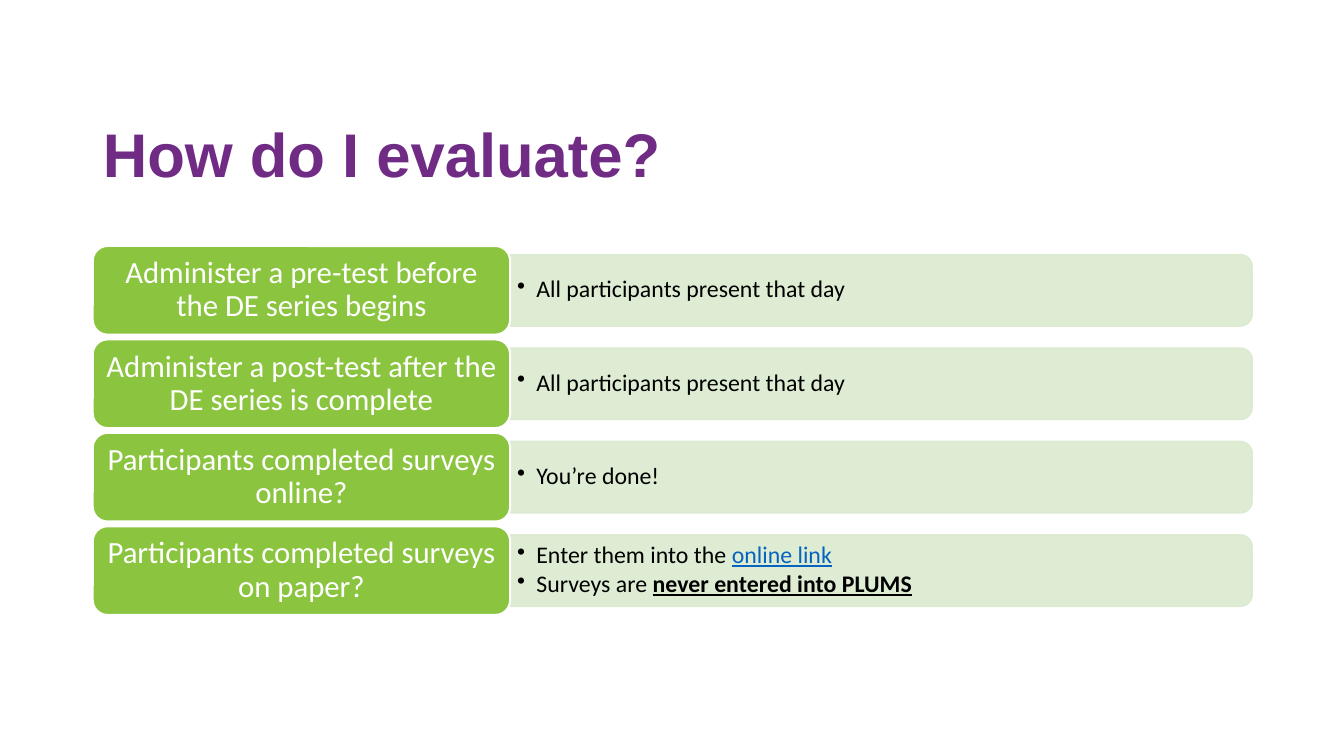
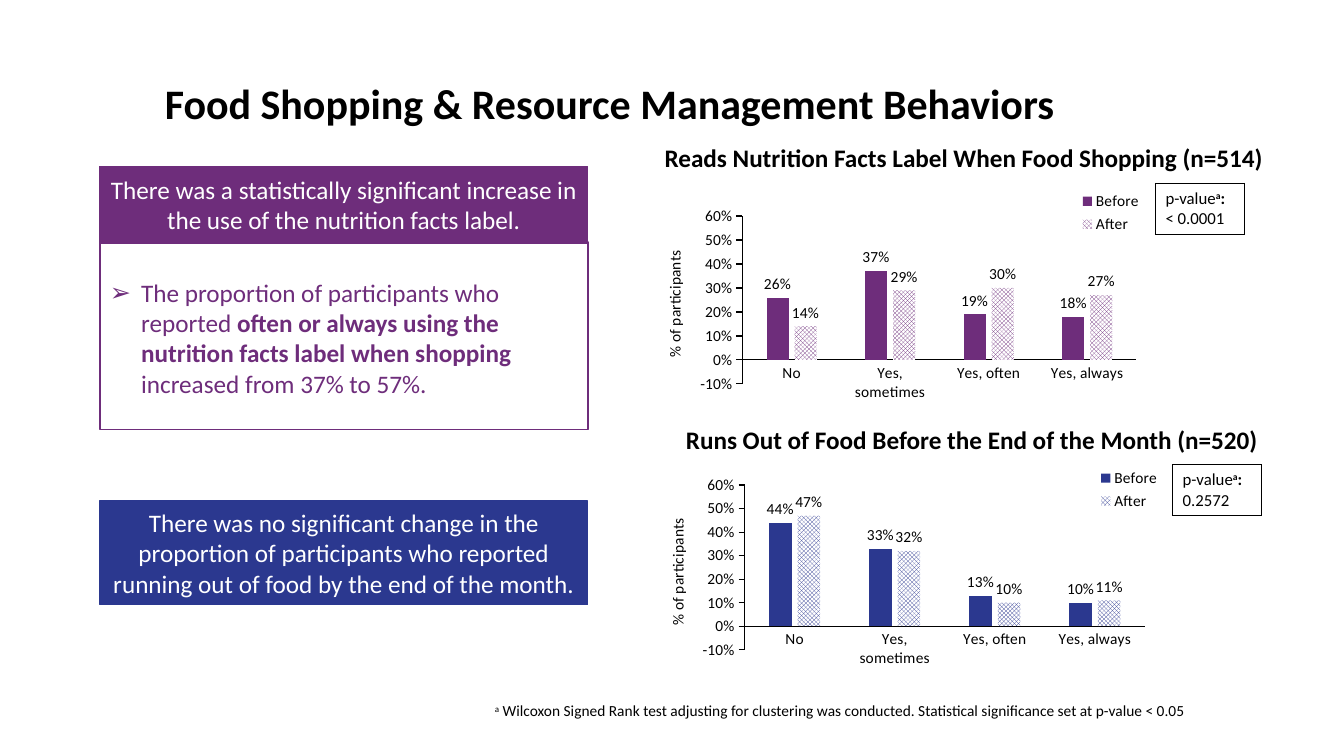
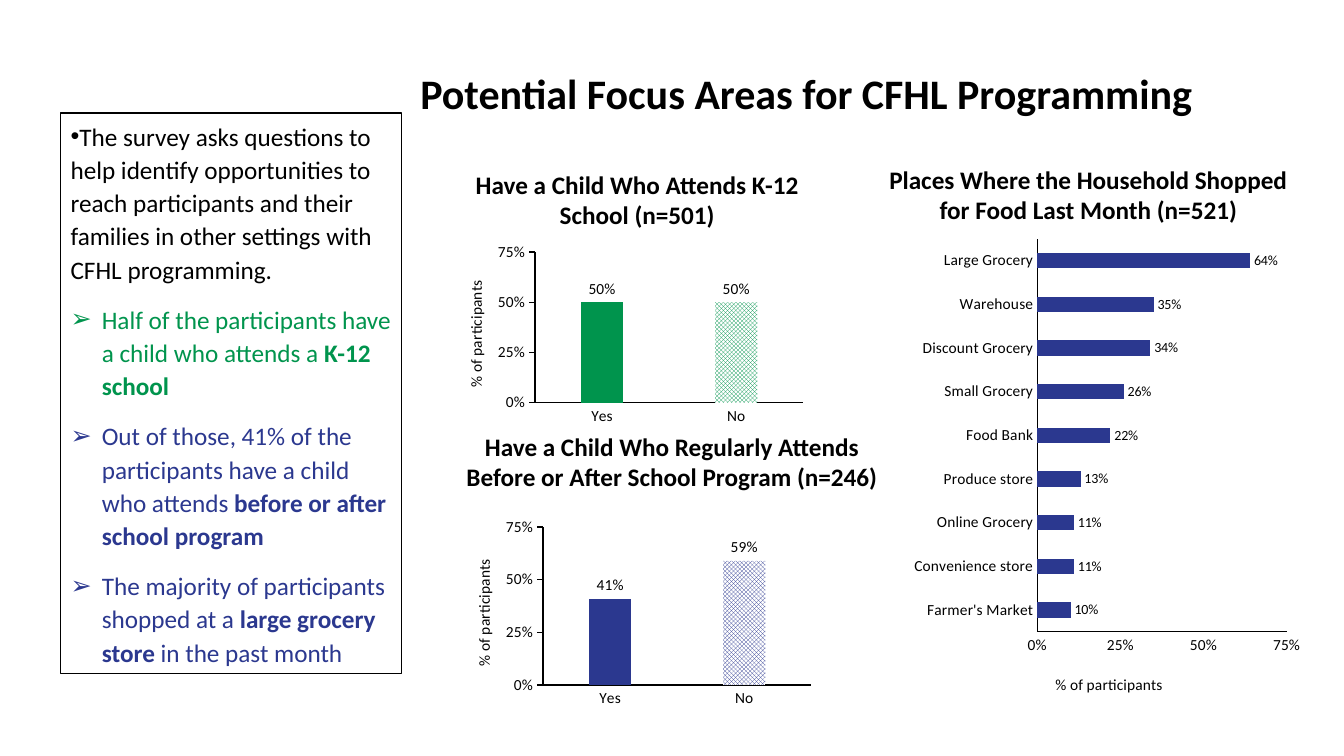
from lxml.etree import SubElement
from pptx import Presentation
from pptx.chart.data import CategoryChartData
from pptx.dml.color import RGBColor
from pptx.enum.chart import XL_CHART_TYPE as ChartType
from pptx.enum.chart import XL_LABEL_POSITION as LabelPosition
from pptx.enum.chart import XL_LEGEND_POSITION as LegendPosition
from pptx.enum.chart import XL_TICK_MARK as TickMark
from pptx.enum.dml import MSO_PATTERN as Pattern
from pptx.enum.shapes import MSO_SHAPE as Shape
from pptx.enum.text import MSO_ANCHOR as Anchor
from pptx.enum.text import MSO_AUTO_SIZE as AutoSize
from pptx.enum.text import PP_ALIGN as Align
from pptx.oxml.ns import qn
from pptx.util import Inches, Pt

# Shared look
rgb = RGBColor.from_string
BLACK, WHITE, LINK = "000000", "FFFFFF", "0563C1"
TITLE_PURPLE, PURPLE, BLUE, GREEN = "702B84", "6E2D7B", "2B388F", "00944D"
LIME, PALE_GREEN = "8BC53F", "DAEACF"
FONT = "Calibri"
ARROW = "➢"


def write(frame, paragraphs, size, color=BLACK, bold=False, align=Align.LEFT,
          anchor=Anchor.TOP, bullet=None, indent=0.31, line=1.0, before=0,
          after=0, font=FONT):
    """Fill a frame; a run is a string or (string, marks), marks from b, u, ^, @."""
    frame.word_wrap = True
    frame.auto_size = AutoSize.NONE
    frame.vertical_anchor = anchor
    for number, runs in enumerate(paragraphs):
        paragraph = frame.paragraphs[0] if number == 0 else frame.add_paragraph()
        paragraph.alignment = align
        paragraph.line_spacing = line
        paragraph.space_before = Pt(before if number else 0)
        paragraph.space_after = Pt(after)
        properties = paragraph._p.get_or_add_pPr()
        hanging = Inches(indent) if bullet else 0
        properties.set("marL", str(hanging))
        properties.set("indent", str(-hanging))
        if bullet:
            SubElement(properties, qn("a:buChar")).set("char", bullet)
        else:
            SubElement(properties, qn("a:buNone"))
        paragraph.font.name = font
        paragraph.font.size = Pt(size)
        paragraph.font.bold = bold
        paragraph.font.color.rgb = rgb(color)
        for part in runs:
            text, marks = (part, "") if isinstance(part, str) else part
            run = paragraph.add_run()
            run.text = text
            if "b" in marks:
                run.font.bold = True
            if "u" in marks:
                run.font.underline = True
            if "@" in marks:
                run.font.color.rgb = rgb(LINK)
            if "^" in marks:
                run.font._element.set("baseline", "30000")


def percent_chart(slide, box, categories, series, color, plot_area, top, step,
                  bottom=0, horizontal=False, gap=219, label_size=11,
                  legend_at=None, axis_title_at=None):
    """Add a bar chart of shares; the second series or point is hatched."""
    data = CategoryChartData(number_format="0%")
    data.categories = categories
    for name, values in series:
        data.add_series(name, values)
    kind = ChartType.BAR_CLUSTERED if horizontal else ChartType.COLUMN_CLUSTERED
    chart = slide.shapes.add_chart(kind, *map(Inches, box), data).chart
    chart.has_title = False
    chart.font.name = FONT
    chart.font.size = Pt(11)
    chart.font.color.rgb = rgb(BLACK)

    # Bars and their labels
    plot = chart.plots[0]
    plot.vary_by_categories = False
    plot.gap_width = gap
    plot.overlap = 0 if horizontal else -27
    for bars in plot.series:
        bars.invert_if_negative = False
        bars.format.fill.solid()
        bars.format.fill.fore_color.rgb = rgb(color)
        labels = bars.data_labels
        labels.show_value = True
        labels.position = LabelPosition.OUTSIDE_END
        labels.number_format = "0%"
        labels.number_format_is_linked = False
        labels.font.size = Pt(label_size)
        labels.font.name = FONT
        labels.font.color.rgb = rgb(BLACK)
    if not horizontal:
        hatched = plot.series[1] if len(series) > 1 else plot.series[0].points[1]
        fill = hatched.format.fill
        fill.patterned()
        fill.pattern = Pattern.TRELLIS
        fill.fore_color.rgb = rgb(color)
        fill.back_color.rgb = rgb(WHITE)

    # Axes
    shares = chart.value_axis
    shares.minimum_scale, shares.maximum_scale = bottom, top
    shares.major_unit = step
    shares.has_major_gridlines = False
    shares.tick_labels.number_format = "0%"
    shares.tick_labels.number_format_is_linked = False
    for axis in (shares, chart.category_axis):
        axis.major_tick_mark = axis.minor_tick_mark = TickMark.NONE
        axis.format.line.color.rgb = rgb(BLACK)
        axis.format.line.width = Pt(1)
    if not horizontal:
        shares.major_tick_mark = TickMark.OUTSIDE
    caption = shares.axis_title.text_frame
    caption.text = "% of participants"
    caption.paragraphs[0].font.size = Pt(11)
    caption.paragraphs[0].font.bold = False
    caption.paragraphs[0].font.color.rgb = rgb(BLACK)
    if not horizontal:
        caption._txBody.bodyPr.set("rot", "-5400000")

    # Fixed places inside the chart, as shares of its size
    places = [(chart._chartSpace.chart.plotArea, 0, plot_area)]
    if legend_at:
        chart.has_legend = True
        chart.legend.position = LegendPosition.CORNER
        chart.legend.include_in_layout = False
        chart.legend.font.size = Pt(11)
        places.append((chart.legend._element, 1, legend_at))
    if axis_title_at:
        places.append((shares.axis_title._element, 1, axis_title_at))
    for parent, index, place in places:
        for old in parent.findall(qn("c:layout")):
            parent.remove(old)
        layout = SubElement(parent, qn("c:layout"))
        parent.insert(index, layout)
        manual = SubElement(layout, qn("c:manualLayout"))
        if len(place) == 4:
            SubElement(manual, qn("c:layoutTarget")).set("val", "inner")
        for mode in ("c:xMode", "c:yMode"):
            SubElement(manual, qn(mode)).set("val", "edge")
        for key, value in zip("xywh", place):
            SubElement(manual, qn(f"c:{key}")).set("val", str(value))


prs = Presentation()
prs.slide_width, prs.slide_height = Inches(13.33), Inches(7.5)

# Slides with their titles: layout, box, text, size, colour, font, alignment
slides = []
for layout, box, text, size, color, font, align in [
    (5, (0.92, 0.84, 11.5, 1.45), "How do I evaluate?",
     44, TITLE_PURPLE, "Arial", Align.LEFT),
    (1, (0.5, 0.67, 11.1, 0.76), "Food Shopping & Resource Management Behaviors",
     30, BLACK, FONT, Align.CENTER),
    (1, (4, 0.57, 8, 0.76), "Potential Focus Areas for CFHL Programming",
     30, BLACK, FONT, Align.CENTER),
]:
    slide = prs.slides.add_slide(prs.slide_layouts[layout])
    title = slide.shapes.title
    title.left, title.top, title.width, title.height = map(Inches, box)
    write(title.text_frame, [[text]], size, color, True, align, Anchor.MIDDLE,
          line=0.9, font=font)
    slides.append(slide)
evaluate, shopping, focus = slides

# Evaluation steps
steps = [
    ("Administer a pre-test before the DE series begins",
     [["All participants present that day"]]),
    ("Administer a post-test after the DE series is complete",
     [["All participants present that day"]]),
    ("Participants completed surveys online?", [["You’re done!"]]),
    ("Participants completed surveys on paper?",
     [["Enter them into the ", ("online link", "u@")],
      ["Surveys are ", ("never entered into PLUMS", "bu")]]),
]
STEP_HEIGHT, STEP_PITCH = 0.88, 0.927
BAND_LENGTH, BAND_HEIGHT = 7.36, 0.71
for number, (step, details) in enumerate(steps):
    top = 2.44 + number * STEP_PITCH
    middle = top + STEP_HEIGHT / 2

    # The band is an upright shape turned so its round corners face right
    band = evaluate.shapes.add_shape(
        Shape.ROUND_2_SAME_RECTANGLE,
        Inches(5.06 + (BAND_LENGTH - BAND_HEIGHT) / 2),
        Inches(middle - BAND_LENGTH / 2), Inches(BAND_HEIGHT), Inches(BAND_LENGTH))
    band.rotation = 90
    band.shadow.inherit = False
    band.fill.solid()
    band.fill.fore_color.rgb = rgb(PALE_GREEN)
    band.line.color.rgb = rgb(PALE_GREEN)
    band.line.width = Pt(1)
    for tint in band._element.spPr.iter(qn("a:srgbClr")):
        SubElement(tint, qn("a:alpha")).set("val", "90000")

    detail = evaluate.shapes.add_textbox(
        Inches(5.06), Inches(middle - 0.32), Inches(7.33), Inches(0.64)).text_frame
    detail.margin_left = detail.margin_right = Inches(0.07)
    detail.margin_top = detail.margin_bottom = Inches(0.04)
    write(detail, details, 17, anchor=Anchor.MIDDLE, bullet="•", indent=0.19,
          line=0.9, after=2.5)

    card = evaluate.shapes.add_shape(
        Shape.ROUNDED_RECTANGLE, Inches(0.92), Inches(top), Inches(4.14),
        Inches(STEP_HEIGHT))
    card.shadow.inherit = False
    card.fill.solid()
    card.fill.fore_color.rgb = rgb(LIME)
    card.line.color.rgb = rgb(WHITE)
    card.line.width = Pt(1.5)
    card.text_frame.margin_left = card.text_frame.margin_right = Inches(0.09)
    write(card.text_frame, [[step]], 22, WHITE, align=Align.CENTER,
          anchor=Anchor.MIDDLE, line=0.9)

# Findings on food shopping
for top, height, color, finding in [
    (1.65, 0.76, PURPLE, "There was a statistically significant increase in "
     "the use of the nutrition facts label."),
    (4.97, 1.03, BLUE, "There was no significant change in the proportion of "
     "participants who reported running out of food by the end of the month."),
]:
    banner = shopping.shapes.add_shape(
        Shape.RECTANGLE, Inches(0.99), Inches(top), Inches(4.84), Inches(height))
    banner.shadow.inherit = False
    banner.fill.solid()
    banner.fill.fore_color.rgb = rgb(color)
    banner.line.color.rgb = rgb(color)
    banner.line.width = Pt(1)
    write(banner.text_frame, [[finding]], 18, WHITE, align=Align.CENTER,
          anchor=Anchor.MIDDLE)

# Outlined lists
for slide, box, outline in [
    (shopping, (0.99, 2.4, 4.84, 1.86), PURPLE),
    (focus, (0.6, 1.12, 3.38, 5.56), BLACK),
]:
    panel = slide.placeholders[1]
    panel.left, panel.top, panel.width, panel.height = map(Inches, box)
    panel.fill.solid()
    panel.fill.fore_color.rgb = rgb(WHITE)
    panel.line.color.rgb = rgb(outline)
    panel.line.width = Pt(1)

label_use = shopping.placeholders[1].text_frame
label_use.margin_top = Inches(0.35)
write(label_use, [[
    "The proportion of participants who reported ",
    ("often or always using the nutrition facts label when shopping ", "b"),
    "increased from 37% to 57%."]], 18, PURPLE, bullet=ARROW)

survey = focus.placeholders[1].text_frame
write(survey, [
    ["The survey asks questions to help identify opportunities to reach "
     "participants and their families in other settings with CFHL programming."],
    ["Half of the participants have a child who attends a ", ("K-12 school", "b")],
    ["Out of those, 41% of the participants have a child who attends ",
     ("before or after school program", "b")],
    ["The majority of participants shopped at a ", ("large grocery store ", "b"),
     "in the past month"],
], 18, bullet=ARROW, line=1.1, before=12)
intro, *areas = survey.paragraphs
intro_properties = intro._p.pPr
intro_properties.remove(intro_properties.find(qn("a:buChar")))
intro_properties.set("marL", "0")
intro_properties.set("indent", "0")
for area, color in zip(areas, (GREEN, BLUE, BLUE)):
    area.font.color.rgb = rgb(color)

# Chart headings and footnote
for slide, box, heading in [
    (shopping, (6.45, 1.36, 6.22, 0.4),
     "Reads Nutrition Facts Label When Food Shopping (n=514)"),
    (shopping, (6.57, 4.16, 6.14, 0.4),
     "Runs Out of Food Before the End of the Month (n=520)"),
    (focus, (4.27, 1.63, 4.1, 0.71), "Have a Child Who Attends K-12 School (n=501)"),
    (focus, (4.4, 4.23, 4.53, 0.71),
     "Have a Child Who Regularly Attends Before or After School Program (n=246)"),
    (focus, (8.63, 1.58, 4.33, 0.71),
     "Places Where the Household Shopped for Food Last Month (n=521)"),
]:
    write(slide.shapes.add_textbox(*map(Inches, box)).text_frame, [[heading]],
          18, bold=True, align=Align.CENTER)
footnote = shopping.shapes.add_textbox(
    Inches(4.81), Inches(6.91), Inches(7.53), Inches(0.47)).text_frame
write(footnote, [[("a", "^"), " Wilcoxon Signed Rank test adjusting for clustering "
                  "was conducted. Statistical significance set at p-value < 0.05"]], 11)

# Before and after charts with their p-values
answers = ["No", "Yes, sometimes", "Yes, often", "Yes, always"]
for box, color, before, after, plot_area, legend_at, p_left, p_top, p_value in [
    ((6.45, 1.84, 5.4, 2.43), PURPLE, (0.26, 0.37, 0.19, 0.18),
     (0.14, 0.29, 0.3, 0.27), (0.169, 0.125, 0.724, 0.685), (0.785, 0.01),
     11.46, 1.82, "< 0.0001"),
    ((6.57, 4.44, 5.06, 2.43), BLUE, (0.44, 0.33, 0.13, 0.1),
     (0.47, 0.32, 0.1, 0.11), (0.161, 0.154, 0.785, 0.672), (0.85, 0.07),
     11.63, 4.61, "0.2572"),
]:
    percent_chart(shopping, box, answers, [("Before", before), ("After", after)],
                  color, plot_area, 0.6, 0.1, bottom=-0.1, legend_at=legend_at)
    table = shopping.shapes.add_table(
        1, 1, Inches(p_left), Inches(p_top), Inches(0.88), Inches(0.5)).table
    table.first_row = table.horz_banding = False
    cell = table.cell(0, 0)
    write(cell.text_frame, [["p-value", ("a", "b^"), (":", "b")], [p_value]], 12)
    for side in ("a:lnL", "a:lnR", "a:lnT", "a:lnB"):
        border = SubElement(cell._tc.get_or_add_tcPr(), qn(side), w=str(Pt(1)))
        paint = SubElement(border, qn("a:solidFill"))
        SubElement(paint, qn("a:srgbClr")).set("val", BLACK)
    cell.fill.background()

# School charts
for box, color, shares, plot_area in [
    ((4.5, 2.2, 3.62, 2.12), GREEN, (0.5, 0.5), (0.223, 0.142, 0.735, 0.705)),
    ((4.58, 4.86, 3.62, 2.26), BLUE, (0.41, 0.59), (0.223, 0.164, 0.735, 0.693)),
]:
    percent_chart(focus, box, ["Yes", "No"], [("Series 1", shares)], color,
                  plot_area, 0.75, 0.25)

# Places shopped, from the bottom bar up
places_shopped = {
    "Farmer's Market": 0.1, "Convenience store": 0.11, "Online Grocery": 0.11,
    "Produce store": 0.13, "Food Bank": 0.22, "Small Grocery": 0.26,
    "Discount Grocery": 0.34, "Warehouse": 0.35, "Large Grocery": 0.64,
}
percent_chart(focus, (8.99, 2.28, 3.97, 4.76), list(places_shopped),
              [("Series 1", list(places_shopped.values()))], BLUE,
              (0.327, 0.019, 0.623, 0.819), 0.75, 0.25, horizontal=True, gap=182,
              label_size=10, axis_title_at=(0.365, 0.92))

prs.save("out.pptx")
